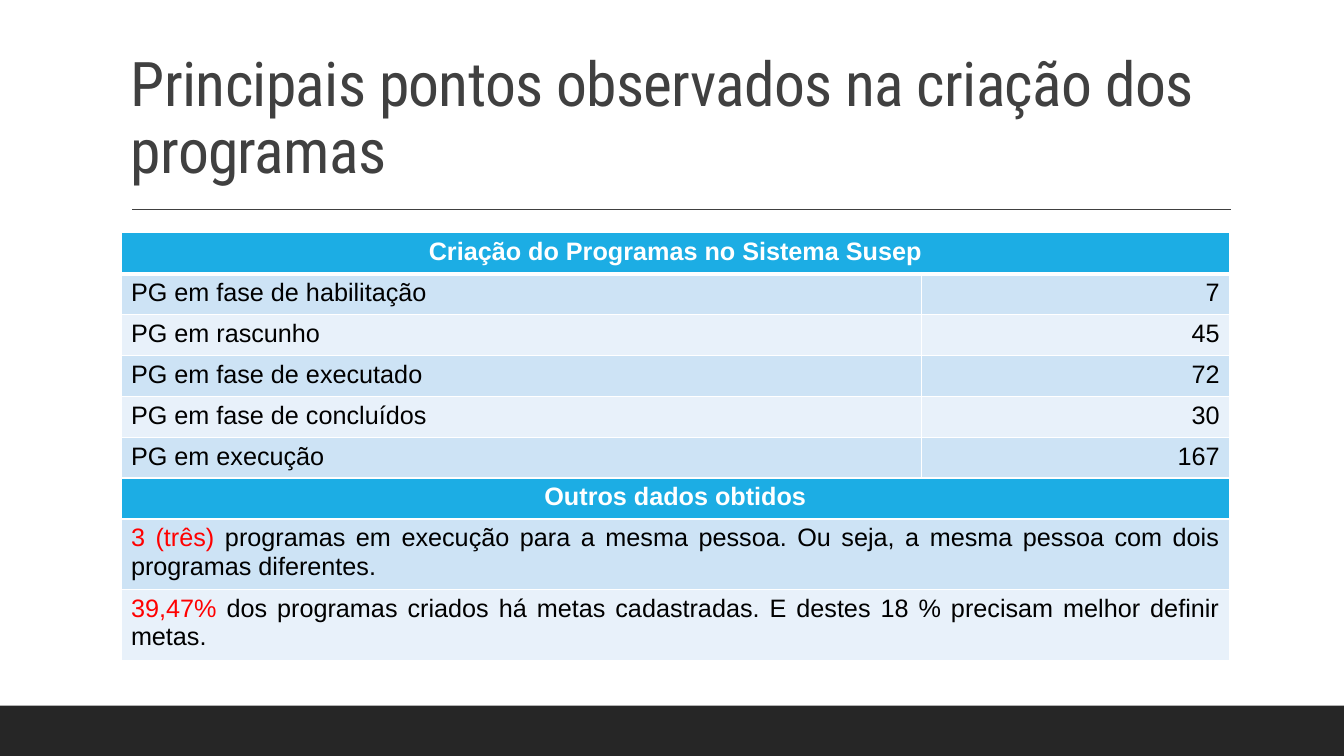
from dataclasses import dataclass

from lxml.etree import SubElement
from pptx import Presentation
from pptx.dml.color import RGBColor
from pptx.enum.shapes import MSO_CONNECTOR, MSO_SHAPE
from pptx.enum.text import MSO_ANCHOR, PP_ALIGN
from pptx.oxml.ns import qn
from pptx.util import Inches, Pt

WIDTH, HEIGHT = 13.33, 7.5
WHITE, BLACK, RED = "FFFFFF", "000000", "FF0000"
HEADING, BAND_DARK, BAND_LIGHT = "1CADE4", "CDE3F5", "E8F1FA"
LABEL_SHARE = 13 / 18
SINGLE, DOUBLE = 5, 8


@dataclass(frozen=True)
class Area:
    """Position and size in percent of the slide."""

    left: float
    top: float
    width: float
    height: float

    def lengths(self) -> tuple:
        return (across(self.left), down(self.top), across(self.width), down(self.height))


@dataclass(frozen=True)
class Span:
    text: str
    color: str = BLACK
    bold: bool = False


@dataclass(frozen=True)
class Row:
    spans: tuple
    fill: str
    value: str = ""
    align: PP_ALIGN = PP_ALIGN.LEFT
    units: int = SINGLE


def heading(text: str) -> Row:
    return Row((Span(text, WHITE, True),), HEADING, align=PP_ALIGN.CENTER)


def count(label: str, value: int, fill: str) -> Row:
    return Row((Span(label),), fill, str(value))


def finding(figure: str, text: str, fill: str) -> Row:
    return Row((Span(figure, RED), Span(text)), fill, align=PP_ALIGN.JUSTIFY, units=DOUBLE)


ROWS = (
    heading("Criação do Programas no Sistema Susep"),
    count("PG em fase de habilitação", 7, BAND_DARK),
    count("PG em rascunho", 45, BAND_LIGHT),
    count("PG em fase de executado", 72, BAND_DARK),
    count("PG em fase de concluídos", 30, BAND_LIGHT),
    count("PG em execução", 167, BAND_DARK),
    heading("Outros dados obtidos"),
    finding(
        "3 (três) ",
        "programas em execução para a mesma pessoa. "
        "Ou seja, a mesma pessoa com dois programas diferentes.",
        BAND_DARK,
    ),
    finding(
        "39,47% ",
        "dos programas criados há metas cadastradas. "
        "E destes 18 % precisam melhor definir metas.",
        BAND_LIGHT,
    ),
)


def across(percent: float) -> int:
    return Inches(WIDTH * percent / 100)


def down(percent: float) -> int:
    return Inches(HEIGHT * percent / 100)


def paint(color: str) -> RGBColor:
    return RGBColor.from_string(color)


def apply_format(target, values: dict) -> None:
    for name, value in values.items():
        setattr(target, name, value)


def add_span(para, span: Span, size: float, font: str):
    run = para.add_run()
    run.text = span.text
    apply_format(run.font, {"name": font, "size": Pt(size), "bold": span.bold})
    run.font.color.rgb = paint(span.color)
    return run


def add_footer_bar(page, area: Area) -> None:
    bar = page.shapes.add_shape(MSO_SHAPE.RECTANGLE, *area.lengths())
    bar.shadow.inherit = False
    bar.fill.solid()
    bar.fill.fore_color.rgb = paint("262626")
    bar.line.fill.background()


def add_rule(page, left: float, right: float, top: float) -> None:
    rule = page.shapes.add_connector(
        MSO_CONNECTOR.STRAIGHT, across(left), down(top), across(right), down(top)
    )
    rule.line.color.rgb = paint("404040")
    rule.line.width = Pt(1)
    SubElement(rule._element.spPr, qn("a:effectLst"))


def add_title(page, area: Area, text: str) -> None:
    box = page.shapes.add_textbox(*area.lengths())
    apply_format(box.text_frame, {"word_wrap": True, "vertical_anchor": MSO_ANCHOR.BOTTOM})
    para = box.text_frame.paragraphs[0]
    para.line_spacing = 0.9
    run = add_span(para, Span(text, "404040"), 44, "Roboto Condensed")
    run.font._element.set("spc", "-50")


def add_borders(cell, widths: dict) -> None:
    properties = cell._tc.get_or_add_tcPr()
    for side, width in widths.items():
        border = SubElement(properties, qn(f"a:ln{side}"), w=str(Pt(width)))
        fill = SubElement(border, qn("a:solidFill"))
        SubElement(fill, qn("a:srgbClr"), val=WHITE)


def fill_cell(cell, spans: tuple, align: PP_ALIGN) -> None:
    para = cell.text_frame.paragraphs[0]
    para.alignment = align
    for span in spans:
        add_span(para, span, 18, "Arial")


def add_program_table(page, area: Area, rows: tuple) -> None:
    table = page.shapes.add_table(len(rows), 2, *area.lengths()).table
    apply_format(table, {"first_row": False, "horz_banding": False})
    for column, share in zip(table.columns, (LABEL_SHARE, 1 - LABEL_SHARE)):
        column.width = int(across(area.width) * share)
    unit = down(area.height) / sum(row.units for row in rows)
    for index, row in enumerate(rows):
        table.rows[index].height = int(unit * row.units)
        label, value = table.cell(index, 0), table.cell(index, 1)
        widths = {"L": 1, "R": 1, "T": 3 if index == 1 else 1, "B": 3 if index == 0 else 1}
        for cell in (label, value):
            add_borders(cell, widths)
            cell.fill.solid()
            cell.fill.fore_color.rgb = paint(row.fill)
        fill_cell(label, row.spans, row.align)
        if row.value:
            fill_cell(value, (Span(row.value),), PP_ALIGN.RIGHT)
        else:
            label.merge(value)


def main() -> None:
    deck = Presentation()
    apply_format(deck, {"slide_width": across(100), "slide_height": down(100)})
    page = deck.slides.add_slide(deck.slide_layouts[6])
    add_footer_bar(page, Area(0, 93.33, 100, 6.67))
    add_rule(page, 9.83, 91.6, 27.73)
    add_title(
        page,
        Area(9, 4.13, 82.5, 21.2),
        "Principais pontos observados na criação dos programas",
    )
    add_program_table(page, Area(9, 30.8, 82.5, 55.2), ROWS)
    deck.save("out.pptx")


if __name__ == "__main__":
    main()
